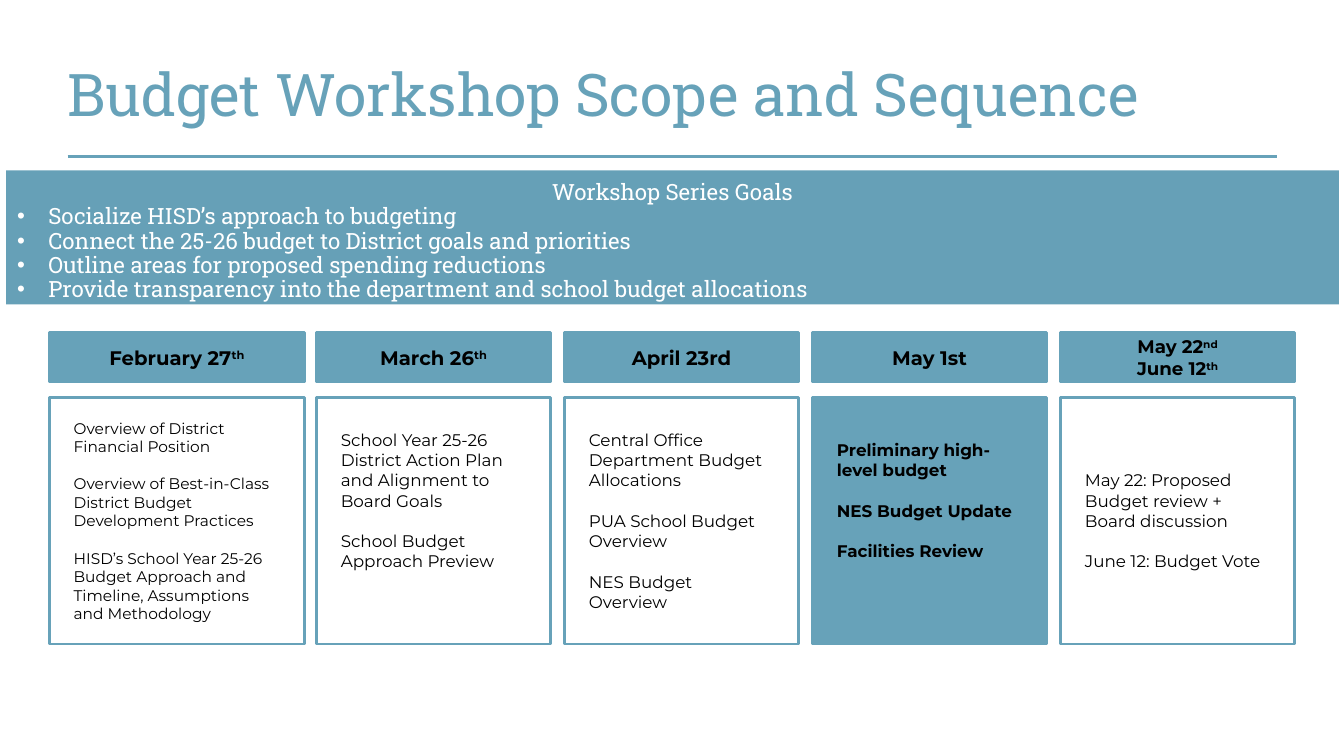
from lxml import etree
from pptx import Presentation
from pptx.dml.color import RGBColor
from pptx.enum.shapes import MSO_CONNECTOR, MSO_SHAPE
from pptx.enum.text import MSO_ANCHOR, MSO_AUTO_SIZE, PP_ALIGN
from pptx.oxml.ns import qn
from pptx.util import Inches, Pt

LEFT, CENTER = PP_ALIGN.LEFT, PP_ALIGN.CENTER
TOP, MIDDLE = MSO_ANCHOR.TOP, MSO_ANCHOR.MIDDLE
RECTANGLE, STRAIGHT = MSO_SHAPE.RECTANGLE, MSO_CONNECTOR.STRAIGHT
NO_AUTOFIT = MSO_AUTO_SIZE.NONE

COLORS = {"teal": "67A2B9", "banner": "66A0B7", "white": "FFFFFF", "black": "000000"}
SERIF, SANS = "Roboto Slab", "Montserrat"
LINE_HEIGHT = 1.22

TITLE = "Budget Workshop Scope and Sequence"
GOALS_HEADING = "Workshop Series Goals"
GOALS = [
    "Socialize HISD’s approach to budgeting",
    "Connect the 25-26 budget to District goals and priorities",
    "Outline areas for proposed spending reductions",
    "Provide transparency into the department and school budget allocations",
]
WORKSHOPS = [
    {"dates": [("February 27", "th")], "size": 11, "topics": [
        "Overview of District Financial Position",
        "Overview of Best-in-Class District Budget Development Practices",
        "HISD’s School Year 25-26 Budget Approach and Timeline, "
        "Assumptions and Methodology"]},
    {"dates": [("March 26", "th")], "bottom": 0.56, "topics": [
        "School Year 25-26 District Action Plan and Alignment to Board Goals",
        "School Budget Approach Preview"]},
    {"dates": [("April 23rd", "")], "topics": [
        "Central Office Department Budget Allocations",
        "PUA School Budget Overview",
        "NES Budget Overview"]},
    {"dates": [("May 1st", "")], "bottom": 0.56, "current": True, "topics": [
        "Preliminary high-level budget",
        "NES Budget Update",
        "Facilities Review"]},
    {"dates": [("May 22", "nd"), ("June 12", "th")], "date_size": 13, "topics": [
        "May 22: Proposed Budget review + Board discussion",
        "June 12: Budget Vote"]},
]
COLUMN_LEFTS = [0.49] + [3.14 + 2.46 * step for step in range(4)]
COLUMN_WIDTHS = [2.53] + [2.32] * 4


def rgb(name):
    """Return the named colour."""
    return RGBColor.from_string(COLORS[name])


def apply(target, values):
    """Set each attribute in values on the target."""
    for name, value in values.items():
        setattr(target, name, value)


def place(shape, left, top, width, height):
    """Move and size a shape, in inches."""
    apply(shape, {"left": Inches(left), "top": Inches(top),
                  "width": Inches(width), "height": Inches(height)})


def format_frame(frame, anchor, left, top, right, bottom):
    """Set the anchor and insets of a text frame."""
    apply(frame, {"word_wrap": True, "auto_size": NO_AUTOFIT, "vertical_anchor": anchor,
                  "margin_left": Inches(left), "margin_top": Inches(top),
                  "margin_right": Inches(right), "margin_bottom": Inches(bottom)})


def add_paragraph(frame, index, **values):
    """Return the first or a new paragraph, formatted."""
    para = frame.paragraphs[0] if index == 0 else frame.add_paragraph()
    apply(para, {"space_before": Pt(0), "space_after": Pt(0), **values})
    return para


def add_span(para, text, font, size, color, bold=False, raised=False):
    """Add a formatted run, raised as a superscript on request."""
    span = para.add_run()
    span.text = text
    apply(span.font, {"name": font, "size": Pt(size), "bold": bold})
    span.font.color.rgb = rgb(color)
    if raised:
        span.font._element.set("baseline", "30000")


def set_bullet(para, mark, indent):
    """Give a paragraph a hanging bullet, or none when mark is empty."""
    props = para._p.get_or_add_pPr()
    props.set("marL", str(Inches(indent)))
    props.set("indent", str(-Inches(indent)))
    if mark:
        etree.SubElement(props, qn("a:buFont")).set("typeface", "Arial")
        etree.SubElement(props, qn("a:buChar")).set("char", mark)
    else:
        etree.SubElement(props, qn("a:buNone"))


def add_box(page, left, top, width, height, fill, bottom=0.16):
    """Add a teal-edged rectangle and return its text frame."""
    box = page.shapes.add_shape(RECTANGLE, Inches(left), Inches(top),
                                Inches(width), Inches(height))
    box.shadow.inherit = False
    box.fill.solid()
    box.fill.fore_color.rgb = rgb(fill)
    box.line.color.rgb = rgb("teal")
    box.line.width = Pt(2)
    format_frame(box.text_frame, MIDDLE, 0.24, 0.16, 0.24, bottom)
    return box.text_frame


def add_title(page):
    """Fill the title placeholder and rule a line below it."""
    title = page.shapes.title
    place(title, 0.67, 0.3, 12, 1.25)
    format_frame(title.text_frame, MIDDLE, 0, 0, 0, 0)
    para = add_paragraph(title.text_frame, 0, alignment=LEFT)
    add_span(para, TITLE, SERIF, 42, "teal")
    rule = page.shapes.add_connector(STRAIGHT, Inches(0.67), Inches(1.55),
                                     Inches(12.67), Inches(1.55))
    rule.line.color.rgb = rgb("teal")
    rule.line.width = Pt(2)
    etree.SubElement(rule._element.spPr, qn("a:effectLst"))


def add_goals(page):
    """Fill the body placeholder with the goals banner."""
    banner = page.placeholders[1]
    place(banner, 0.06, 1.69, 13.22, 1.33)
    banner.fill.solid()
    banner.fill.fore_color.rgb = rgb("banner")
    format_frame(banner.text_frame, TOP, 0.11, 0.11, 0.11, 0.11)
    for index, text in enumerate([GOALS_HEADING] + GOALS):
        para = add_paragraph(banner.text_frame, index, line_spacing=0.9,
                             alignment=LEFT if index else CENTER)
        set_bullet(para, "•" if index else "", 0.31 if index else 0)
        add_span(para, text, SERIF, 16, "white")


def add_workshop(page, workshop, left, width):
    """Add one column: the date box above the topics box."""
    frame = add_box(page, left, 3.3, width, 0.49, "teal")
    size = workshop.get("date_size", 14)
    for index, (date, suffix) in enumerate(workshop["dates"]):
        para = add_paragraph(frame, index, alignment=CENTER)
        add_span(para, date, SANS, size, "black", bold=True)
        if suffix:
            add_span(para, suffix, SANS, size, "black", bold=True, raised=True)

    current = workshop.get("current", False)
    frame = add_box(page, left, 3.94, width, 2.45, "teal" if current else "white",
                    workshop.get("bottom", 0.16))
    size = workshop.get("size", 12)
    for index, topic in enumerate(workshop["topics"]):
        gap = Pt(size * LINE_HEIGHT) if index else Pt(0)
        para = add_paragraph(frame, index, alignment=LEFT, space_before=gap)
        add_span(para, topic, SANS, size, "black", bold=current)


def main():
    """Build the slide and save it."""
    deck = Presentation()
    apply(deck, {"slide_width": Inches(13.33), "slide_height": Inches(7.5)})
    page = deck.slides.add_slide(deck.slide_layouts[1])
    add_title(page)
    add_goals(page)
    for workshop, left, width in zip(WORKSHOPS, COLUMN_LEFTS, COLUMN_WIDTHS):
        add_workshop(page, workshop, left, width)
    deck.save("out.pptx")


if __name__ == "__main__":
    main()
